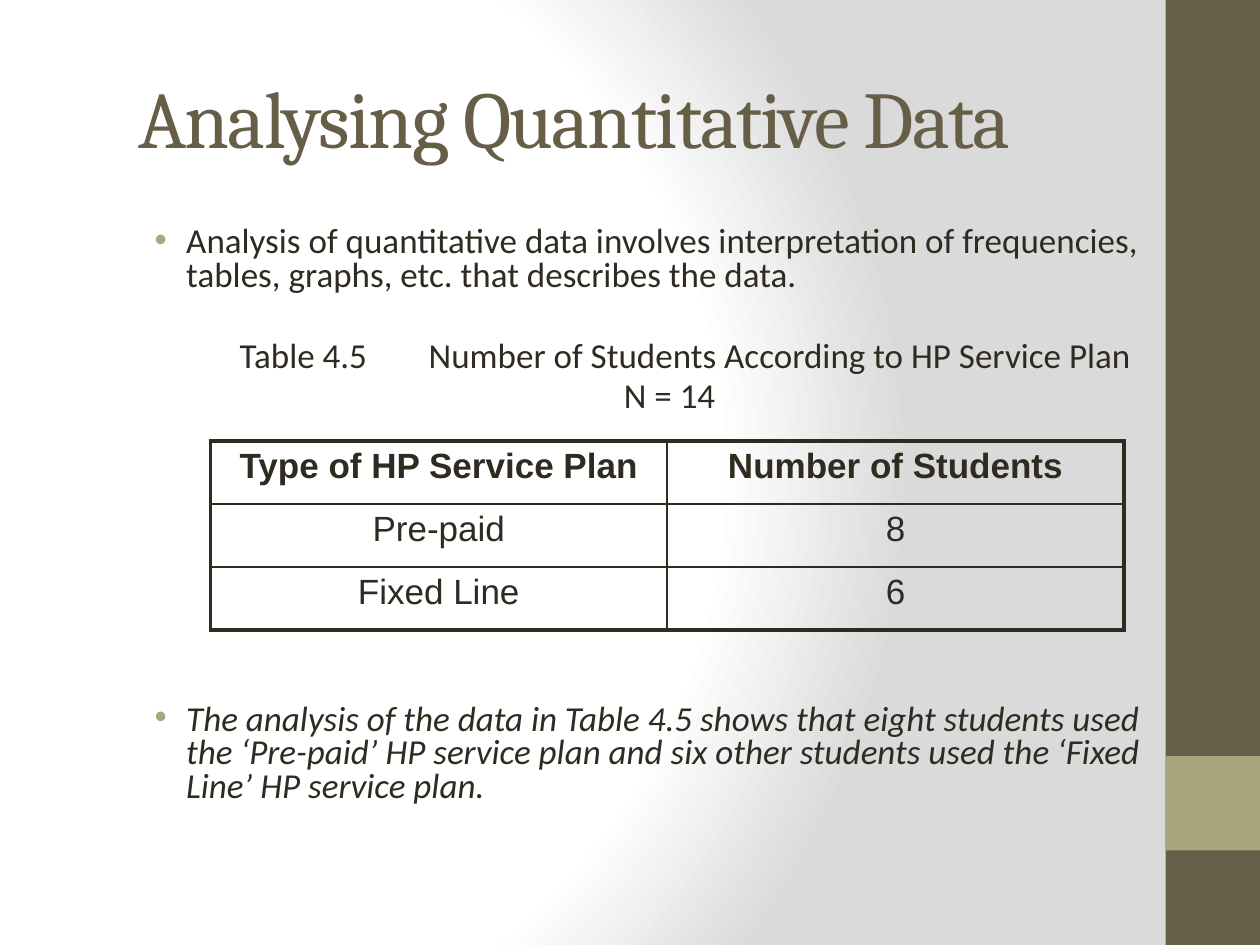
from dataclasses import dataclass

from lxml import etree
from pptx import Presentation
from pptx.dml.color import RGBColor
from pptx.enum.shapes import MSO_SHAPE
from pptx.enum.text import MSO_ANCHOR, PP_ALIGN
from pptx.oxml import parse_xml
from pptx.oxml.ns import nsdecls, qn
from pptx.util import Inches, Pt

RECTANGLE = MSO_SHAPE.RECTANGLE
TOP, MIDDLE = MSO_ANCHOR.TOP, MSO_ANCHOR.MIDDLE
LEFT, CENTER = PP_ALIGN.LEFT, PP_ALIGN.CENTER


@dataclass(frozen=True)
class Theme:
    brown: str = "675E47"
    olive: str = "A9A57C"
    ink: str = "2F2B20"
    gradient: tuple = ((0, "FFFFFF"), (75, "FFFFFF"), (100, "DADADA"))
    title_font: str = "Cambria"
    body_font: str = "Calibri"
    table_font: str = "Arial"
    title_size: float = 46
    body_size: float = 20
    space_before: float = 4
    outer_border: float = 2.25
    inner_border: float = 1


@dataclass(frozen=True)
class Box:
    left: float
    top: float
    width: float
    height: float

    def lengths(self):
        return [Inches(value) for value in (self.left, self.top, self.width, self.height)]


@dataclass(frozen=True)
class BodyParagraph:
    text: str
    space_before: float = 4
    bullet: bool = False
    centered: bool = False
    italic: bool = False


THEME = Theme()
SIDE_PANELS = (
    (Box(9.25, 0, 0.75, 7.5), THEME.brown),
    (Box(9.25, 6, 0.75, 0.75), THEME.olive),
)
TITLE_BOX = Box(1, 0.3, 8.5, 1.25)
BODY_BOX = Box(1, 1.75, 8.5, 4.95)
TABLE_BOX = Box(1.67, 3.5, 7.25, 1.5)
BODY = (
    BodyParagraph("Analysis of quantitative data involves interpretation of frequencies, "
                  "tables, graphs, etc. that describes the data.", bullet=True),
    BodyParagraph("\tTable 4.5 \tNumber of Students According to HP Service Plan",
                  space_before=27, centered=True),
    BodyParagraph("N = 14", centered=True),
    BodyParagraph("The analysis of the data in Table 4.5 shows that eight students used "
                  "the ‘Pre-paid’ HP service plan and six other students used the "
                  "‘Fixed Line’ HP service plan.",
                  space_before=165, bullet=True, italic=True),
)
PLAN_ROWS = (
    ("Type of HP Service Plan", "Number of Students"),
    ("Pre-paid", "8"),
    ("Fixed Line", "6"),
)


def write_text(paragraph, text: str, *, font: str, size: float, color: str,
               bold: bool = False, italic: bool = False, align=LEFT,
               space_before: float = 0, line_spacing: float = 1.0,
               tracking: float = 0) -> None:
    paragraph.alignment = align
    paragraph.space_before = Pt(space_before)
    paragraph.line_spacing = line_spacing
    run = paragraph.add_run()
    run.text = text
    run.font.name = font
    run.font.size = Pt(size)
    run.font.bold = bold
    run.font.italic = italic
    run.font.color.rgb = RGBColor.from_string(color)
    if tracking:
        run.font._element.set("spc", str(round(tracking * 100)))


def set_hanging_indent(paragraph, bullet: bool) -> None:
    properties = paragraph._p.get_or_add_pPr()
    properties.set("marL", str(Inches(0.38)))
    properties.set("indent", str(Inches(-0.25)))
    if not bullet:
        etree.SubElement(properties, qn("a:buNone"))
        return
    bullet_color = etree.SubElement(properties, qn("a:buClr"))
    etree.SubElement(bullet_color, qn("a:srgbClr"), val=THEME.olive)
    etree.SubElement(properties, qn("a:buFont"), typeface=THEME.table_font)
    etree.SubElement(properties, qn("a:buChar"), char="•")


def set_background(slide) -> None:
    """Fill the slide with a radial gradient, which needs XML."""
    stops = "".join(f'<a:gs pos="{position * 1000}"><a:srgbClr val="{color}"/></a:gs>'
                    for position, color in THEME.gradient)
    background = parse_xml(
        f'<p:bg {nsdecls("p", "a")}><p:bgPr><a:gradFill rotWithShape="1">'
        f'<a:gsLst>{stops}</a:gsLst><a:path path="circle">'
        '<a:fillToRect l="20000" t="50000" r="100000" b="50000"/></a:path>'
        '</a:gradFill><a:effectLst/></p:bgPr></p:bg>')
    slide._element.cSld.insert(0, background)


def add_panel(slide, box: Box, color: str) -> None:
    shape = slide.shapes.add_shape(RECTANGLE, *box.lengths())
    shape.shadow.inherit = False
    shape.fill.solid()
    shape.fill.fore_color.rgb = RGBColor.from_string(color)
    shape.line.fill.background()


def add_text_frame(slide, box: Box, anchor=TOP):
    frame = slide.shapes.add_textbox(*box.lengths()).text_frame
    frame.word_wrap = True
    frame.vertical_anchor = anchor
    return frame


def add_body(slide) -> None:
    frame = add_text_frame(slide, BODY_BOX)
    for index, item in enumerate(BODY):
        paragraph = frame.add_paragraph() if index else frame.paragraphs[0]
        write_text(paragraph, item.text, font=THEME.body_font, size=THEME.body_size,
                   color=THEME.ink, italic=item.italic, line_spacing=0.8,
                   align=CENTER if item.centered else LEFT,
                   space_before=item.space_before)
        set_hanging_indent(paragraph, item.bullet)


def set_borders(cell, outer_sides: dict[str, bool]) -> None:
    """Draw each side of a cell, thicker where it lies on the table's edge."""
    properties = cell._tc.get_or_add_tcPr()
    for side, is_outer in outer_sides.items():
        width = THEME.outer_border if is_outer else THEME.inner_border
        line = etree.SubElement(properties, qn(f"a:ln{side}"), w=str(Pt(width)))
        fill = etree.SubElement(line, qn("a:solidFill"))
        etree.SubElement(fill, qn("a:srgbClr"), val=THEME.ink)


def add_plan_table(slide) -> None:
    row_count, column_count = len(PLAN_ROWS), len(PLAN_ROWS[0])
    table = slide.shapes.add_table(row_count, column_count, *TABLE_BOX.lengths()).table
    table.first_row = False
    table.horz_banding = False
    for row, values in enumerate(PLAN_ROWS):
        for column, value in enumerate(values):
            cell = table.cell(row, column)
            set_borders(cell, {"L": column == 0, "R": column == column_count - 1,
                               "T": row == 0, "B": row == row_count - 1})
            cell.fill.background()
            write_text(cell.text_frame.paragraphs[0], value, font=THEME.table_font,
                       size=THEME.body_size, color=THEME.ink, bold=row == 0,
                       align=CENTER, space_before=THEME.space_before)


def main() -> None:
    presentation = Presentation()
    presentation.slide_width, presentation.slide_height = Inches(10), Inches(7.5)
    slide = presentation.slides.add_slide(presentation.slide_layouts[6])
    set_background(slide)
    for box, color in SIDE_PANELS:
        add_panel(slide, box, color)
    title = add_text_frame(slide, TITLE_BOX, MIDDLE)
    write_text(title.paragraphs[0], "Analysing Quantitative Data", font=THEME.title_font,
               size=THEME.title_size, color=THEME.brown, tracking=-1)
    add_body(slide)
    add_plan_table(slide)
    presentation.save("out.pptx")


if __name__ == "__main__":
    main()
